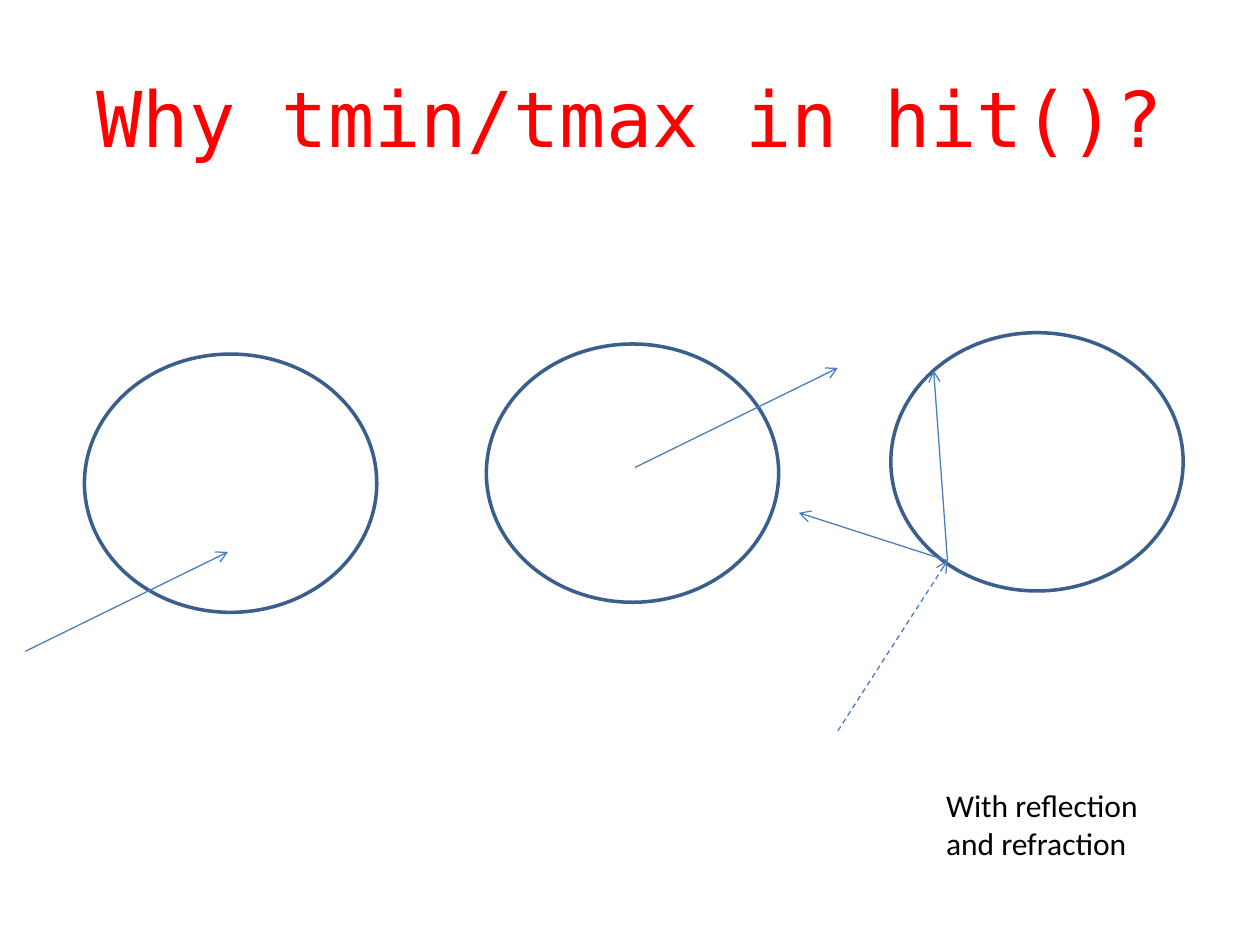
import pptx
import pptx.dml.color
import pptx.enum.dml
import pptx.enum.shapes
import pptx.enum.text
import pptx.oxml
import pptx.oxml.ns
import pptx.util

deck = pptx.Presentation()
deck.slide_width = pptx.util.Inches(10)
deck.slide_height = pptx.util.Inches(7.5)
page = deck.slides.add_slide(deck.slide_layouts[6])

# Square grid: 100 columns by 75 rows
CELL = deck.slide_width // 100
SPHERE_WIDTH, SPHERE_HEIGHT = 23.2, 20.5


def color(hex_code):
    return pptx.dml.color.RGBColor.from_string(hex_code)


def add_text(text, left, top, width, height, *, font, size, ink, align, anchor):
    box = page.shapes.add_textbox(*(round(n * CELL) for n in (left, top, width, height)))
    box.text_frame.word_wrap = True
    box.text_frame.vertical_anchor = anchor
    para = box.text_frame.paragraphs[0]
    para.alignment = align
    span = para.add_run()
    span.text = text
    span.font.name = font
    span.font.size = pptx.util.Pt(size)
    span.font.color.rgb = color(ink)


add_text("Why tmin/tmax in hit()?", 5, 3, 90, 12.5,
         font="DejaVu Sans Mono", size=44, ink="FF0000",
         align=pptx.enum.text.PP_ALIGN.CENTER,
         anchor=pptx.enum.text.MSO_ANCHOR.MIDDLE)

# Spheres: ray entering, ray leaving, ray reflected and refracted
for left, top in [(6.7, 28.1), (38.6, 27.3), (70.7, 26.4)]:
    sphere = page.shapes.add_shape(
        pptx.enum.shapes.MSO_SHAPE.OVAL,
        *(round(n * CELL) for n in (left, top, SPHERE_WIDTH, SPHERE_HEIGHT)))
    sphere.shadow.inherit = False
    sphere.fill.background()
    sphere.line.color.rgb = color("3A5F8C")
    sphere.line.width = pptx.util.Pt(2)

hit_point = (75.2, 44.5)
rays = [
    ((2, 51.7), (18.1, 43.8), False),
    ((50.4, 37.1), (66.5, 29.2), False),
    (hit_point, (74.1, 29.4), False),
    ((66.5, 58), hit_point, True),
    (hit_point, (63.4, 40.7), False),
]
for start, end, dashed in rays:
    ray = page.shapes.add_connector(
        pptx.enum.shapes.MSO_CONNECTOR.STRAIGHT,
        *(round(n * CELL) for n in (*start, *end)))
    ray.line.color.rgb = color("4B7EBC")
    ray.line.width = pptx.util.Pt(0.75)
    if dashed:
        ray.line.dash_style = pptx.enum.dml.MSO_LINE.DASH
    namespace = pptx.oxml.ns.nsdecls("a")
    ray.line._get_or_add_ln().append(
        pptx.oxml.parse_xml(f'<a:tailEnd {namespace} type="arrow"/>'))
    ray._element.spPr.append(pptx.oxml.parse_xml(f"<a:effectLst {namespace}/>"))

add_text("With reflection and refraction", 74.1, 61.9, 19.8, 7.1,
         font="Calibri", size=18, ink="000000",
         align=pptx.enum.text.PP_ALIGN.LEFT,
         anchor=pptx.enum.text.MSO_ANCHOR.TOP)

deck.save("out.pptx")
